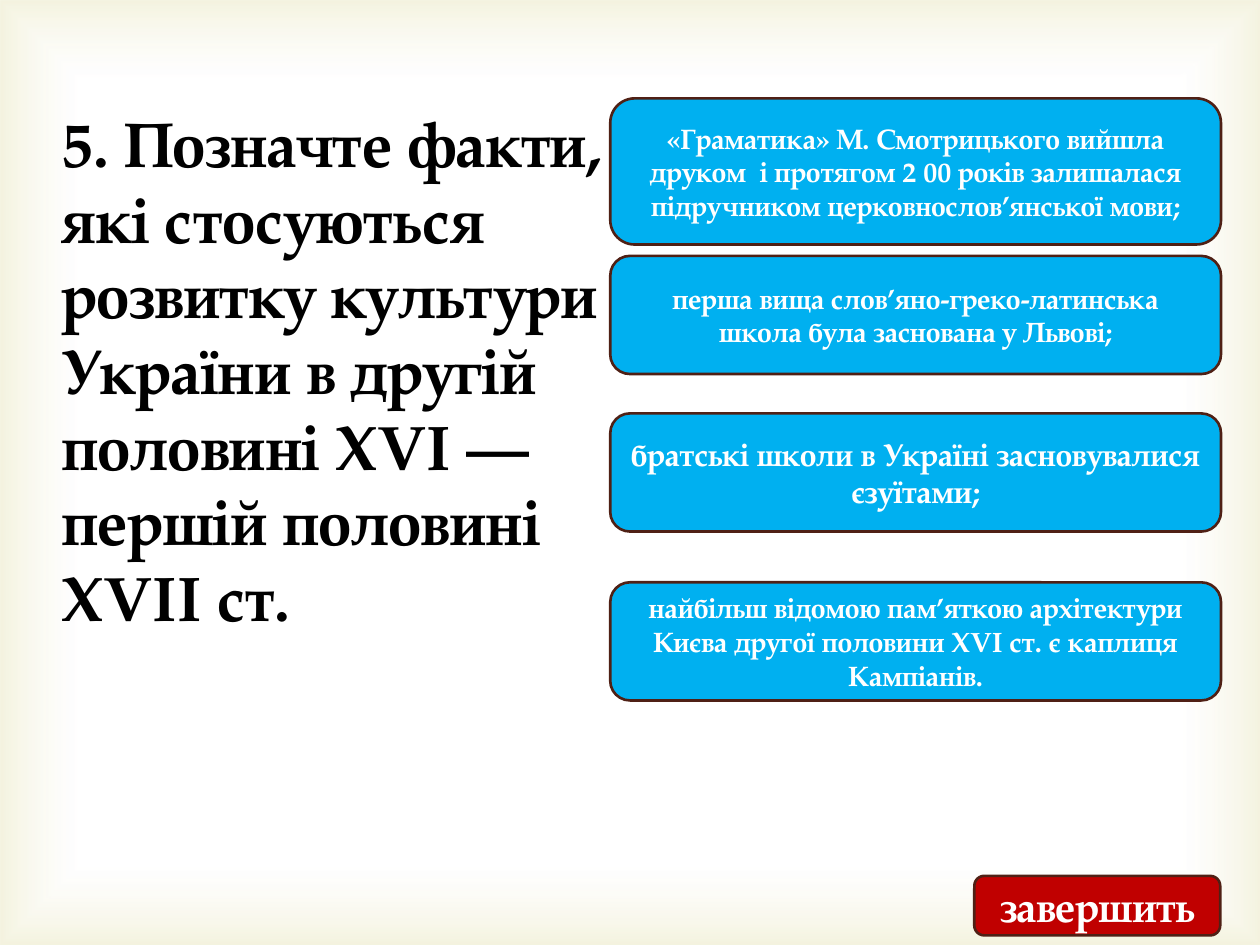
from lxml import etree
from pptx import Presentation
from pptx import util as u
from pptx.dml.color import RGBColor
from pptx.enum import shapes, text
from pptx.oxml import ns

BLACK = RGBColor(0x00, 0x00, 0x00)
WHITE = RGBColor(0xFF, 0xFF, 0xFF)
BLUE = RGBColor(0x00, 0xB0, 0xF0)
RED = RGBColor(0xC0, 0x00, 0x00)
BROWN = RGBColor(0x4F, 0x20, 0x15)
SAND = RGBColor(0xD1, 0xCA, 0x75)

WIDTH, HEIGHT = 720, 540
CARD_LEFT, CARD_WIDTH, CARD_HEIGHT = 348.75, 349, 67.5

QUESTION = ("5. Позначте факти, які стосуються розвитку культури України в другій "
            "половині XVI — першій половині XVII ст.")
# Top, height, font size, wording
ANSWERS = [
    (56.25, 83.5, 16, "«Граматика» М. Смотрицького вийшла друком  і протягом 2 00 років "
                      "залишалася підручником церковнослов’янської мови;"),
    (146.25, CARD_HEIGHT, 16, "перша вища слов’яно-греко-латинська школа була заснована у Львові;"),
    (236.25, CARD_HEIGHT, 18, "братські школи в Україні засновувалися єзуїтами;"),
    (332.75, CARD_HEIGHT, 16, "найбільш відомою пам’яткою архітектури Києва другої половини "
                              "XVI ст. є каплиця Кампіанів."),
]


class SlideBuilder:
    """Holds the shared style and the slide being built."""

    font = {"name": "TeX Gyre Pagella", "bold": True}

    def __init__(self, slide):
        self.slide = slide

    def add_text(self, shape, wording, size, color, align, anchor):
        frame = shape.text_frame
        frame.word_wrap = True
        frame.vertical_anchor = anchor
        paragraph = frame.paragraphs[0]
        paragraph.alignment = align
        run = paragraph.add_run()
        run.text = wording
        for name, value in {**self.font, "size": u.Pt(size)}.items():
            setattr(run.font, name, value)
        run.font.color.rgb = color

    def shape(self, kind, left, top, width, height):
        shape = self.slide.shapes.add_shape(
            kind, u.Pt(left), u.Pt(top), u.Pt(width), u.Pt(height))
        shape.shadow.inherit = False
        return shape

    def glow(self, color):
        """Full-slide rectangle that fades from the edges to the middle."""
        shape = self.shape(shapes.MSO_SHAPE.RECTANGLE, 0, 0, WIDTH, HEIGHT)
        shape.line.fill.background()
        shape.fill.gradient()
        gradient = shape.element.spPr.find(ns.qn("a:gradFill"))
        for child in list(gradient):
            gradient.remove(child)
        stops = etree.SubElement(gradient, ns.qn("a:gsLst"))
        for position, stop_color, alpha in ((83, WHITE, 11), (100, color, 23)):
            stop = etree.SubElement(stops, ns.qn("a:gs"), pos=str(position * 1000))
            fill = etree.SubElement(stop, ns.qn("a:srgbClr"), val=str(stop_color))
            etree.SubElement(fill, ns.qn("a:alpha"), val=str(alpha * 1000))
        spread = etree.SubElement(gradient, ns.qn("a:path"), {"path": "rect"})
        etree.SubElement(spread, ns.qn("a:fillToRect"),
                         {side: "50000" for side in "ltrb"})
        # Keep the rectangle behind the title
        self.slide.shapes.title.element.addprevious(shape.element)

    def title(self, wording, left, top, width, height, size):
        title = self.slide.shapes.title
        box = {"left": left, "top": top, "width": width, "height": height}
        for name, value in box.items():
            setattr(title, name, u.Pt(value))
        title.text_frame.auto_size = text.MSO_AUTO_SIZE.SHAPE_TO_FIT_TEXT
        self.add_text(title, wording, size, BLACK, text.PP_ALIGN.LEFT, text.MSO_ANCHOR.TOP)

    def button(self, wording, left, top, width, height, size, color):
        shape = self.shape(shapes.MSO_SHAPE.ROUNDED_RECTANGLE, left, top, width, height)
        shape.fill.solid()
        shape.fill.fore_color.rgb = color
        shape.line.color.rgb = BROWN
        shape.line.width = u.Pt(1.5)
        self.add_text(shape, wording, size, WHITE, text.PP_ALIGN.CENTER, text.MSO_ANCHOR.MIDDLE)


def main():
    presentation = Presentation()
    presentation.slide_width, presentation.slide_height = u.Pt(WIDTH), u.Pt(HEIGHT)
    layout = presentation.slide_layouts.get_by_name("Title Only")
    builder = SlideBuilder(presentation.slides.add_slide(layout))

    # Background and question
    builder.glow(SAND)
    builder.title(QUESTION, 28, 56.25, 337.5, 312.5, 36)

    # Answer cards
    for top, height, size, wording in ANSWERS:
        builder.button(wording, CARD_LEFT, top, CARD_WIDTH, height, size, BLUE)

    # Finish button
    builder.button("завершить", 556.75, 500.5, 140.5, 34, 24, RED)

    presentation.save("out.pptx")


if __name__ == "__main__":
    main()
